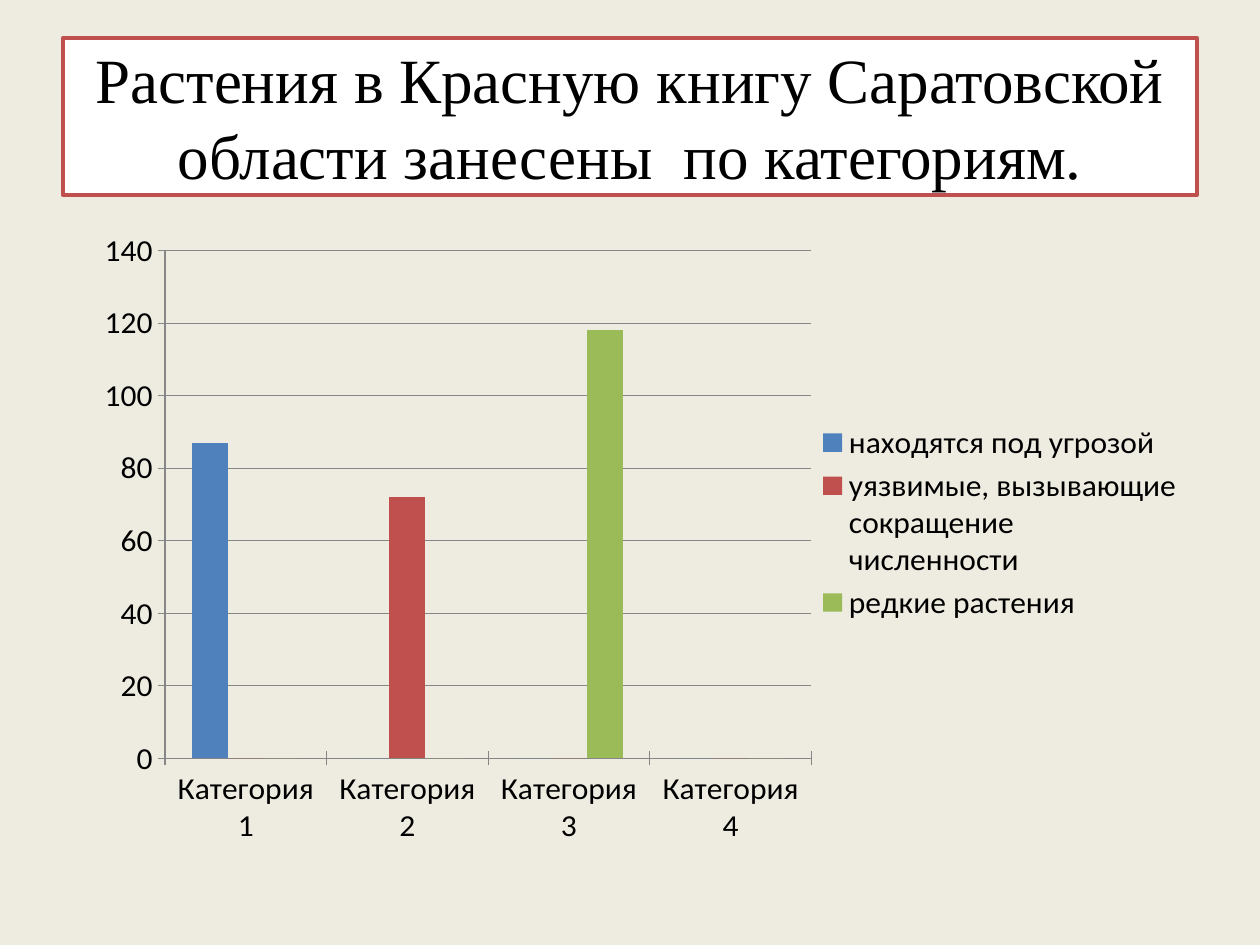
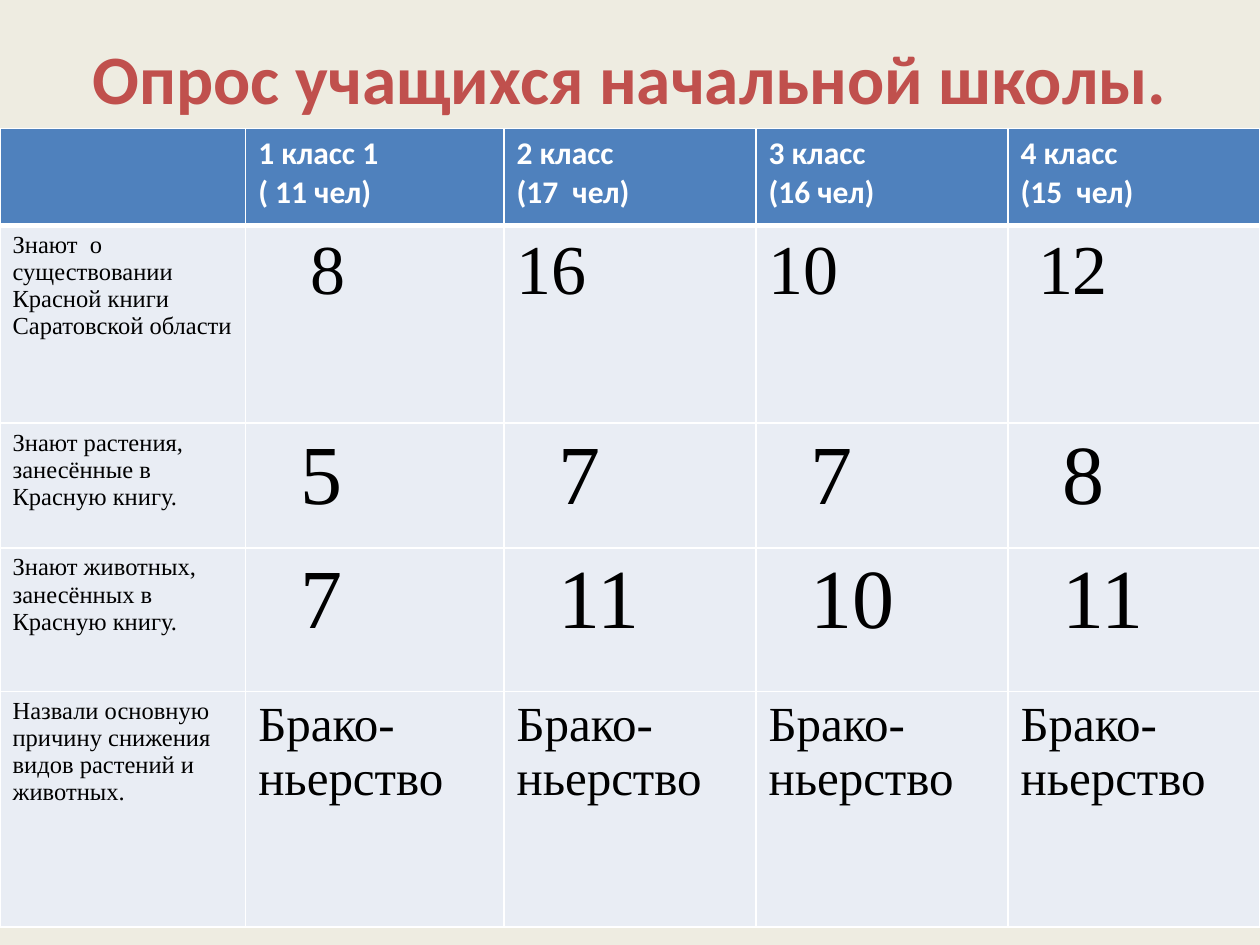
from pptx import Presentation
from pptx.chart.data import CategoryChartData
from pptx.dml.color import RGBColor
from pptx.enum.chart import XL_CHART_TYPE, XL_LEGEND_POSITION, XL_TICK_MARK
from pptx.enum.text import MSO_ANCHOR, MSO_AUTO_SIZE, PP_ALIGN
from pptx.oxml import parse_xml
from pptx.oxml.ns import nsdecls, qn
from pptx.util import Pt

COLUMN = XL_CHART_TYPE.COLUMN_CLUSTERED
RIGHT = XL_LEGEND_POSITION.RIGHT
CROSS = XL_TICK_MARK.CROSS
MIDDLE = MSO_ANCHOR.MIDDLE
NO_FIT = MSO_AUTO_SIZE.NONE
LEFT, CENTER = PP_ALIGN.LEFT, PP_ALIGN.CENTER

CREAM = RGBColor(0xEE, 0xEC, 0xE1)
WHITE = RGBColor(0xFF, 0xFF, 0xFF)
BLACK = RGBColor(0x00, 0x00, 0x00)
GRAY = RGBColor(0x86, 0x86, 0x86)
BLUE = RGBColor(0x4F, 0x81, 0xBD)
RED = RGBColor(0xC0, 0x50, 0x4D)
GREEN = RGBColor(0x9B, 0xBB, 0x59)
PALE = RGBColor(0xE9, 0xED, 0xF4)
SANS, SERIF = "Calibri", "Times New Roman"


def write(tf, text, size=18, font=SERIF, color=BLACK, bold=False, align=LEFT):
    for i, line in enumerate(text.split("\n")):
        p = tf.add_paragraph() if i else tf.paragraphs[0]
        p.alignment = align
        r = p.add_run()
        r.text = line
        r.font.size = Pt(size)
        r.font.name = font
        r.font.bold = bold
        r.font.color.rgb = color


def add_titled_slide(prs, text, height, **fmt):
    s = prs.slides.add_slide(prs.slide_layouts[5])
    sp = s.shapes.title
    sp.left, sp.top, sp.width, sp.height = Pt(36), Pt(21.6), Pt(648), Pt(height)
    tf = sp.text_frame
    tf.word_wrap = True
    tf.auto_size = NO_FIT
    tf.vertical_anchor = MIDDLE
    write(tf, text, align=CENTER, **fmt)
    return s


prs = Presentation()
prs.slide_width, prs.slide_height = Pt(720), Pt(540)
fill = prs.slide_master.background.fill
fill.solid()
fill.fore_color.rgb = CREAM

s = add_titled_slide(
    prs, "Растения в Красную книгу Саратовской области занесены  по категориям.",
    90, size=36)
title = s.shapes.title
title.fill.solid()
title.fill.fore_color.rgb = WHITE
title.line.color.rgb = RED
title.line.width = Pt(2)

series = [
    ("находятся под угрозой", (87, 0, 0, 0), BLUE),
    ("уязвимые, вызывающие сокращение численности", (0, 72, 0, 0), RED),
    ("редкие растения", (0, 0, 118, 0), GREEN),
]
data = CategoryChartData()
data.categories = [f"Категория {n}" for n in range(1, 5)]
for name, values, color in series:
    data.add_series(name, values)
chart = s.shapes.add_chart(COLUMN, Pt(36), Pt(126), Pt(648), Pt(356.4), data).chart
chart.has_title = False
chart.font.size = Pt(18)
chart.font.name = SANS
chart.font.color.rgb = BLACK
chart.has_legend = True
chart.legend.position = RIGHT
chart.legend.include_in_layout = False
plot = chart.plots[0]
plot.vary_by_categories = False
plot.gap_width = 150
plot.overlap = 0
for ser, (name, values, color) in zip(plot.series, series):
    ser.format.fill.solid()
    ser.format.fill.fore_color.rgb = color
for axis in (chart.category_axis, chart.value_axis):
    axis.major_tick_mark = CROSS
    axis.format.line.color.rgb = GRAY
chart.value_axis.has_major_gridlines = True
chart.value_axis.major_gridlines.format.line.color.rgb = GRAY
chart.value_axis.maximum_scale = 140
chart.value_axis.minimum_scale = 0
chart.value_axis.major_unit = 20

area = plot._element.getparent()
for old in area.findall(qn("c:layout")):
    area.remove(old)
box = "".join(f'<c:{k} val="{v}"/>' for k, v in (
    ("layoutTarget", "inner"), ("xMode", "edge"), ("yMode", "edge"),
    ("x", 0.09), ("y", 0.05), ("w", 0.57), ("h", 0.84)))
area.insert(0, parse_xml(
    f'<c:layout {nsdecls("c")}><c:manualLayout>{box}</c:manualLayout></c:layout>'))

s = add_titled_slide(prs, "Опрос учащихся начальной школы.", 44,
                     size=39.6, font=SANS, color=RED, bold=True)

headers = ["", "1 класс 1\n( 11 чел)", "2 класс\n(17  чел)",
           "3 класс\n(16 чел)", "4 класс\n(15  чел)"]
answers = [
    ("Знают  о существовании Красной книги Саратовской области",
     ["8", "16", "10", "12"], 40, [30, 0, 0, 10]),
    ("Знают растения, занесённые в Красную книгу.",
     ["5", "7", "7", "8"], 48, [24] * 4),
    ("Знают животных, занесённых в Красную книгу.",
     ["7", "11", "10", "11"], 48, [24] * 4),
    ("Назвали основную причину снижения видов растений и животных.",
     ["Брако-\nньерство"] * 4, 28, [0] * 4),
]
col_widths = [140.4, 147.6, 144, 144, 144]
row_heights = [55.4, 113, 71.3, 82.1, 134.6]
table = s.shapes.add_table(len(row_heights), len(col_widths), Pt(0), Pt(73.4),
                           Pt(sum(col_widths)), Pt(sum(row_heights))).table
table.horz_banding = False
for col, width in zip(table.columns, col_widths):
    col.width = Pt(width)
for row, height in zip(table.rows, row_heights):
    row.height = Pt(height)

for i, row in enumerate(table.rows):
    for j, cell in enumerate(row.cells):
        tcPr = cell._tc.get_or_add_tcPr()
        for side in "LRTB":
            thick = (i, side) in ((0, "B"), (1, "T"))
            tcPr.append(parse_xml(
                f'<a:ln{side} {nsdecls("a")} w="{Pt(3 if thick else 1)}"><a:solidFill>'
                f'<a:srgbClr val="{WHITE}"/></a:solidFill></a:ln{side}>'))
        cell.fill.solid()
        cell.fill.fore_color.rgb = PALE if i else BLUE
        if i == 0:
            if headers[j]:
                write(cell.text_frame, headers[j], font=SANS, color=WHITE, bold=True)
            continue
        question, values, size, indents = answers[i - 1]
        if j == 0:
            write(cell.text_frame, question, size=14)
        else:
            cell.margin_left = Pt(7.2 + indents[j - 1])
            write(cell.text_frame, values[j - 1], size=size)

prs.save("out.pptx")
